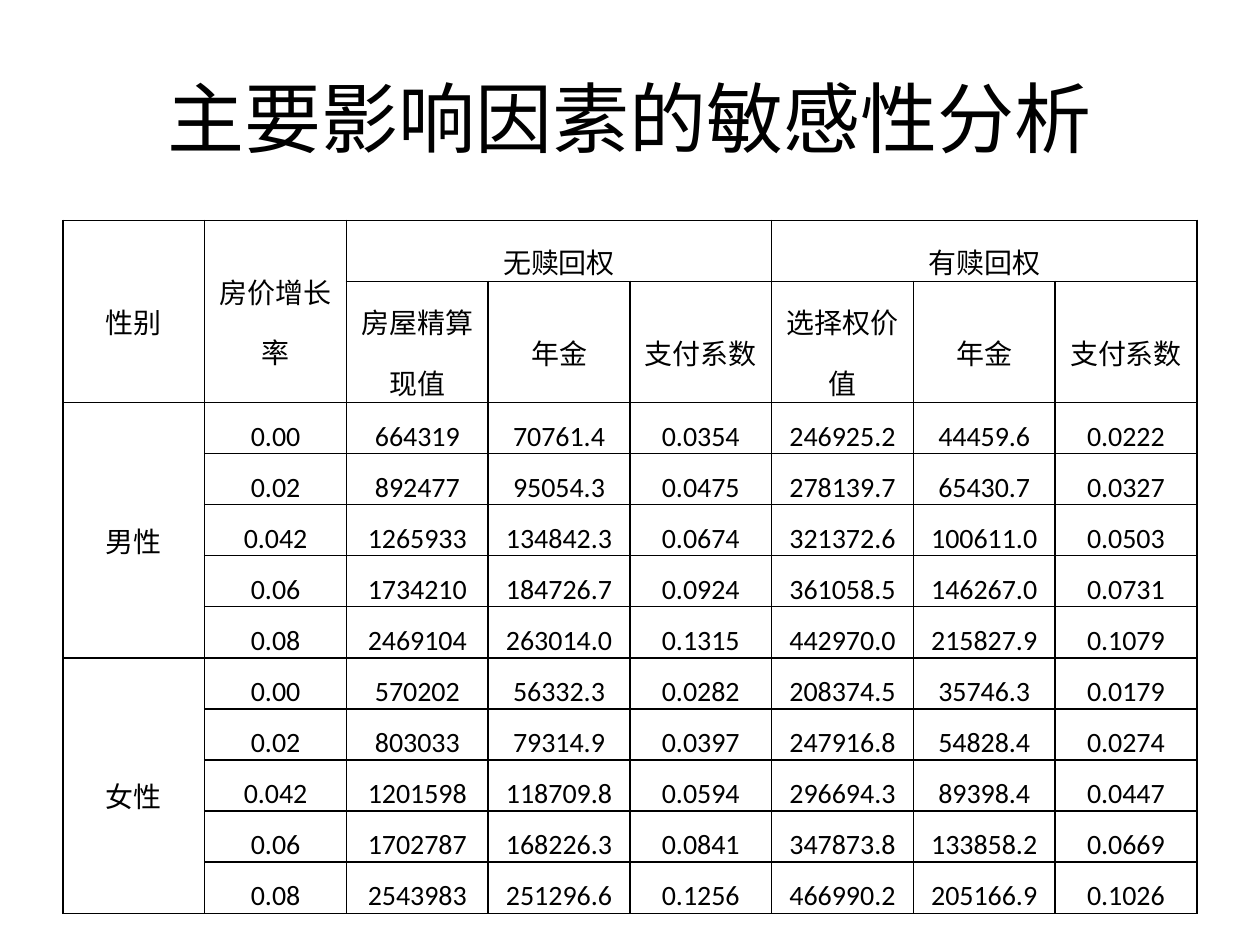
"""Build a slide with a sensitivity table of the main influencing factors."""
from dataclasses import dataclass

from lxml.etree import SubElement
from pptx import Presentation
from pptx.dml.color import RGBColor
from pptx.enum.text import MSO_ANCHOR, PP_ALIGN
from pptx.oxml.ns import qn
from pptx.util import Cm, Pt

TITLE = "主要影响因素的敏感性分析"
GROUP_HEADER = ["性别", "房价增长率", "无赎回权", "", "", "有赎回权", "", ""]
COLUMN_HEADER = ["", "", "房屋精算现值", "年金", "支付系数", "选择权价值", "年金", "支付系数"]
RESULTS = {
    "男性": [
        ("0.00", "664319", "70761.4", "0.0354", "246925.2", "44459.6", "0.0222"),
        ("0.02", "892477", "95054.3", "0.0475", "278139.7", "65430.7", "0.0327"),
        ("0.042", "1265933", "134842.3", "0.0674", "321372.6", "100611.0", "0.0503"),
        ("0.06", "1734210", "184726.7", "0.0924", "361058.5", "146267.0", "0.0731"),
        ("0.08", "2469104", "263014.0", "0.1315", "442970.0", "215827.9", "0.1079"),
    ],
    "女性": [
        ("0.00", "570202", "56332.3", "0.0282", "208374.5", "35746.3", "0.0179"),
        ("0.02", "803033", "79314.9", "0.0397", "247916.8", "54828.4", "0.0274"),
        ("0.042", "1201598", "118709.8", "0.0594", "296694.3", "89398.4", "0.0447"),
        ("0.06", "1702787", "168226.3", "0.0841", "347873.8", "133858.2", "0.0669"),
        ("0.08", "2543983", "251296.6", "0.1256", "466990.2", "205166.9", "0.1026"),
    ],
}
HEADER_HEIGHTS = [1.23, 2.44]
DATA_HEIGHT = 1.03
OPTION_COLUMN = 5
HEADER_SPANS = [(0, 0, 1, 0), (0, 1, 1, 1), (0, 2, 0, 4), (0, 5, 0, 7)]


@dataclass(frozen=True)
class Theme:
    """Colours, type and line sizes of the slide."""

    font: str = "Calibri"
    ink: str = "000000"
    title_size: int = 44
    table_size: int = 16
    border_width: int = 1


THEME = Theme()


def style_paragraph(paragraph, size):
    """Centre a paragraph and set its font."""
    paragraph.alignment = PP_ALIGN.CENTER
    paragraph.font.name = THEME.font
    paragraph.font.size = Pt(size)
    paragraph.font.color.rgb = RGBColor.from_string(THEME.ink)


def add_borders(cell):
    """Draw a solid line on each side of a cell."""
    properties = cell._tc.get_or_add_tcPr()
    for side in ("a:lnL", "a:lnR", "a:lnT", "a:lnB"):
        line = SubElement(properties, qn(side), w=str(Pt(THEME.border_width)))
        fill = SubElement(line, qn("a:solidFill"))
        SubElement(fill, qn("a:srgbClr"), val=THEME.ink)


def fill_cell(cell, text, anchor):
    """Write and format one table cell."""
    cell.text = text
    cell.vertical_anchor = anchor
    cell.margin_left = cell.margin_right = Cm(0.19)
    cell.margin_top = cell.margin_bottom = 0
    paragraph = cell.text_frame.paragraphs[0]
    paragraph.line_spacing = 1.5
    style_paragraph(paragraph, THEME.table_size)
    add_borders(cell)
    cell.fill.background()


def add_title(slide):
    """Add the slide heading."""
    shape = slide.shapes.add_textbox(Cm(1.27), Cm(0.76), Cm(22.86), Cm(3.18))
    frame = shape.text_frame
    frame.word_wrap = True
    frame.vertical_anchor = MSO_ANCHOR.MIDDLE
    frame.text = TITLE
    style_paragraph(frame.paragraphs[0], THEME.title_size)


def add_results(slide):
    """Add the table with merged headers and one block per gender."""
    rows = [GROUP_HEADER, COLUMN_HEADER]
    spans = list(HEADER_SPANS)
    gender_rows = []
    for gender, block in RESULTS.items():
        first = len(rows)
        gender_rows.append(first)
        spans.append((first, 0, first + len(block) - 1, 0))
        rows += [["" if index else gender, *values] for index, values in enumerate(block)]

    header_count = len(HEADER_HEIGHTS)
    heights = HEADER_HEIGHTS + [DATA_HEIGHT] * (len(rows) - header_count)
    table = slide.shapes.add_table(
        len(rows), len(GROUP_HEADER), Cm(1.27), Cm(4.44), Cm(22.86), Cm(sum(heights))
    ).table
    table.first_row = table.horz_banding = False
    for row_index, (row, height) in enumerate(zip(rows, heights)):
        table.rows[row_index].height = Cm(height)
        for column_index, text in enumerate(row):
            is_option = row_index >= header_count and column_index >= OPTION_COLUMN
            anchor = MSO_ANCHOR.TOP if is_option else MSO_ANCHOR.MIDDLE
            fill_cell(table.cell(row_index, column_index), text, anchor)
    for top, left, bottom, right in spans:
        table.cell(top, left).merge(table.cell(bottom, right))
    for row_index in gender_rows:
        table.cell(row_index, 0)._tc.get_or_add_tcPr().set("vert", "eaVert")


def main():
    """Create and save the presentation."""
    presentation = Presentation()
    presentation.slide_width, presentation.slide_height = Cm(25.4), Cm(19.05)
    slide = presentation.slides.add_slide(presentation.slide_layouts[6])
    add_title(slide)
    add_results(slide)
    presentation.save("out.pptx")


if __name__ == "__main__":
    main()
